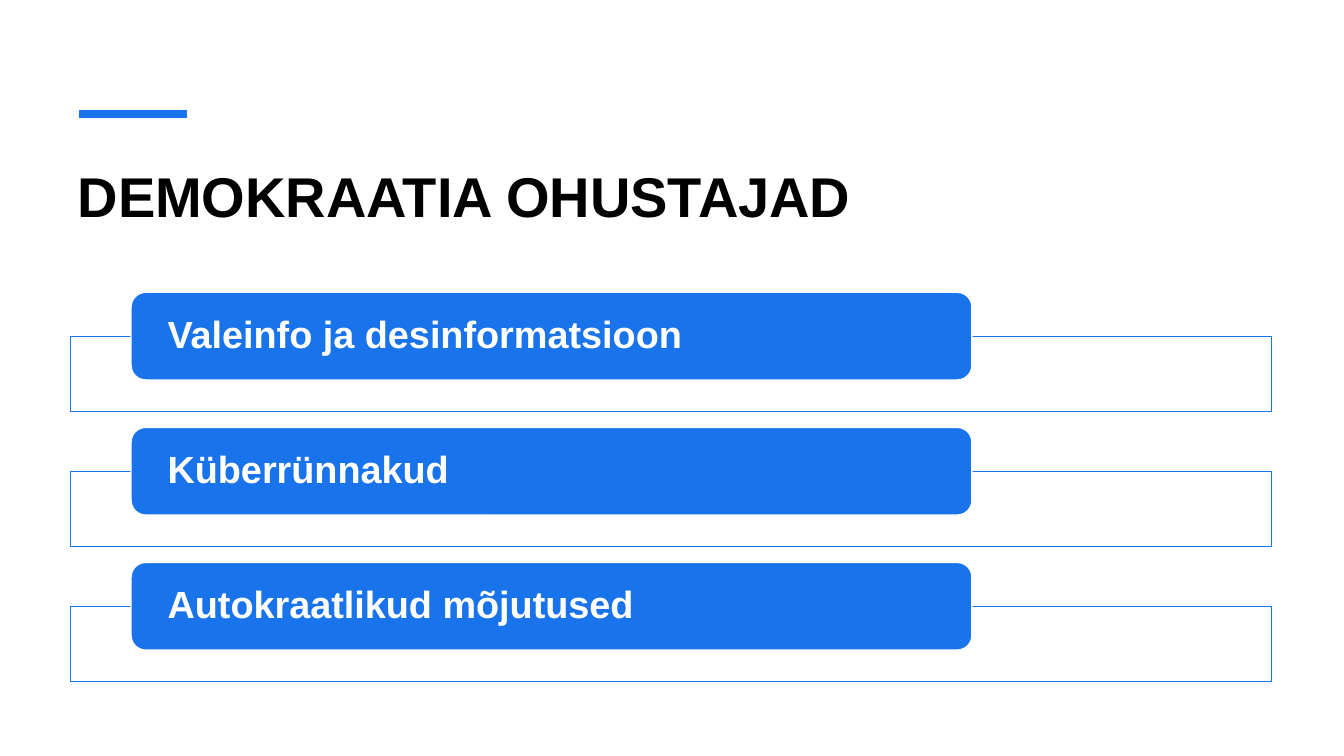
"""Build the slide listing three threats to democracy."""

from dataclasses import dataclass

from lxml.etree import SubElement
from pptx import Presentation
from pptx.dml.color import RGBColor
from pptx.enum.shapes import MSO_CONNECTOR, MSO_SHAPE
from pptx.enum.text import MSO_ANCHOR, PP_ALIGN
from pptx.oxml.ns import qn
from pptx.shapes.autoshape import Shape
from pptx.slide import Slide
from pptx.text.text import TextFrame
from pptx.util import Emu, Pt

PX_PER_INCH = 100
COLOURS = {"blue": "1973EB", "white": "FFFFFF", "black": "000000"}
FONT = "Arial"
ROW_TOP, ROW_STEP = 290, 134


@dataclass
class Box:
    left: int
    top: int
    width: int
    height: int


@dataclass
class Threat:
    label: str
    top: int


THREATS = [
    Threat(label, ROW_TOP + index * ROW_STEP)
    for index, label in enumerate(
        ["Valeinfo ja desinformatsioon", "Küberrünnakud", "Autokraatlikud mõjutused"]
    )
]


def px(length: int) -> Emu:
    return Emu(length * 914400 // PX_PER_INCH)


def colour(name: str) -> RGBColor:
    return RGBColor.from_string(COLOURS[name])


def write_text(frame: TextFrame, text: str, size: int, colour_name: str) -> None:
    frame.word_wrap = True
    para = frame.paragraphs[0]
    para.text = text
    para.alignment = PP_ALIGN.LEFT
    para.line_spacing = 0.9 if colour_name == "white" else 1.0
    para.font.name = FONT
    para.font.size = Pt(size)
    para.font.bold = True
    para.font.color.rgb = colour(colour_name)


def add_box(page: Slide, kind: MSO_SHAPE, box: Box, fill: str, line: str) -> Shape:
    shape = page.shapes.add_shape(
        kind, px(box.left), px(box.top), px(box.width), px(box.height)
    )
    shape.shadow.inherit = False
    shape.fill.solid()
    shape.fill.fore_color.rgb = colour(fill)
    shape.line.color.rgb = colour(line)
    shape.line.width = Pt(1)
    return shape


def add_accent(page: Slide) -> None:
    accent = page.shapes.add_connector(
        MSO_CONNECTOR.STRAIGHT, px(78), px(113), px(185), px(113)
    )
    accent.line.color.rgb = colour("blue")
    accent.line.width = Pt(6)
    SubElement(accent._element.spPr, qn("a:effectLst"))


def add_title(page: Slide) -> None:
    title = page.shapes.title
    title.left, title.top, title.width, title.height = px(70), px(150), px(1191), px(120)
    frame = title.text_frame
    frame.vertical_anchor = MSO_ANCHOR.TOP
    frame.margin_left, frame.margin_top = px(7), px(10)
    write_text(frame, "DEMOKRAATIA OHUSTAJAD", 40, "black")


def add_threat(page: Slide, threat: Threat) -> None:
    frame_box = Box(70, threat.top + 44, 1191, 74)
    panel = add_box(page, MSO_SHAPE.RECTANGLE, frame_box, "white", "blue")
    fill_colour = panel._element.spPr.find(f"{qn('a:solidFill')}/{qn('a:srgbClr')}")
    SubElement(fill_colour, qn("a:alpha"), val="90000")

    pill_box = Box(130, threat.top, 834, 87)
    pill = add_box(page, MSO_SHAPE.ROUNDED_RECTANGLE, pill_box, "blue", "white")
    frame = pill.text_frame
    frame.vertical_anchor = MSO_ANCHOR.MIDDLE
    frame.margin_left = frame.margin_right = px(32)
    frame.margin_top = frame.margin_bottom = px(0)
    write_text(frame, threat.label, 27, "white")


def main() -> None:
    deck = Presentation()
    deck.slide_width, deck.slide_height = px(1333), px(750)
    page = deck.slides.add_slide(deck.slide_layouts[5])
    add_accent(page)
    add_title(page)
    for threat in THREATS:
        add_threat(page, threat)
    deck.save("out.pptx")


if __name__ == "__main__":
    main()
